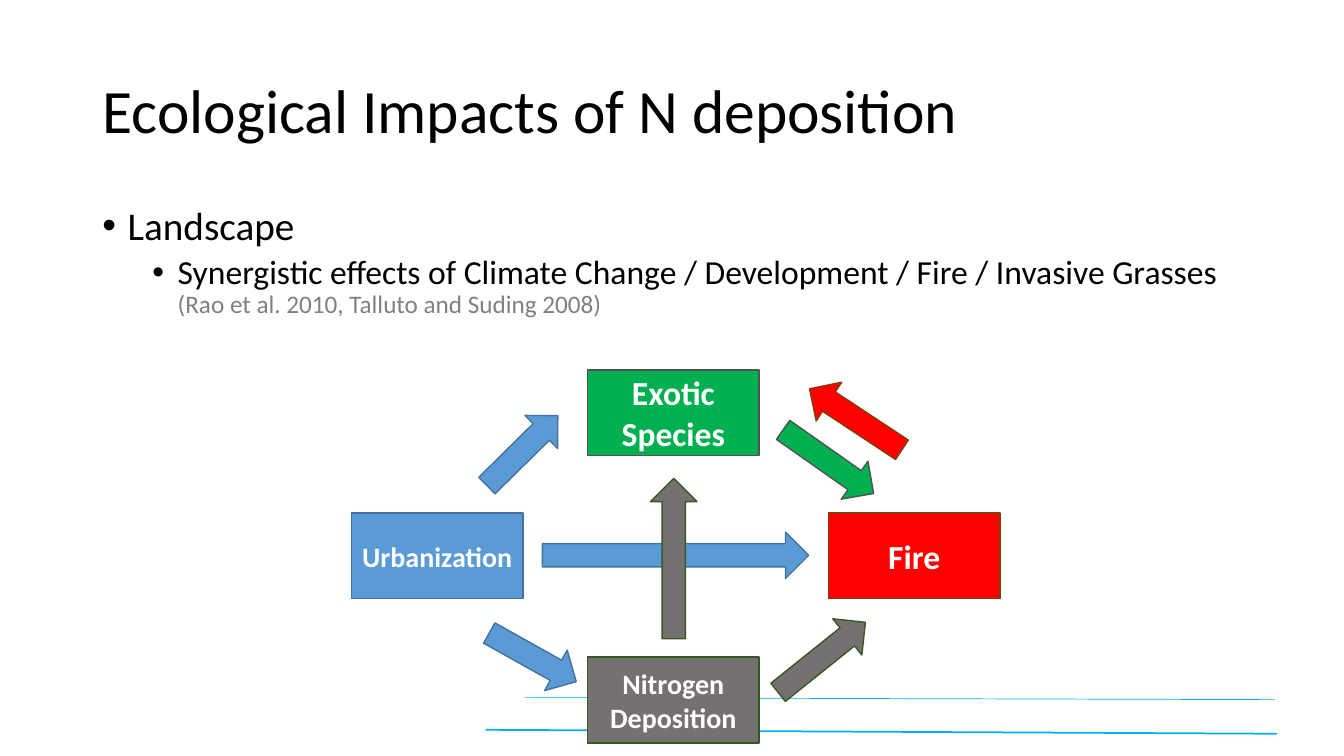
from lxml import etree
from pptx import Presentation
from pptx import util as u
from pptx.dml.color import RGBColor
from pptx.enum import shapes, text
from pptx.oxml.ns import qn

COLOURS = {
    "black": "000000", "white": "FFFFFF", "citation": "808080", "rule": "00B0F0",
    "urban": "5B9BD5", "urban edge": "43739E",
    "exotic": "00B050", "exotic edge": "525252",
    "fire": "FF0000", "fire edge": "843C0B",
    "nitrogen": "767171", "nitrogen edge": "385723",
}


def add_span(para, words, size, colour, bold=False):
    span = para.add_run()
    span.text = words
    for name, value in {"name": "Calibri", "size": u.Pt(size), "bold": bold}.items():
        setattr(span.font, name, value)
    span.font.color.rgb = RGBColor.from_string(COLOURS[colour])


def add_block(kind, place, topic):
    """Add a shape filled and edged in the colours of its topic."""
    block = page.shapes.add_shape(kind, *map(u.Cm, place))
    block.shadow.inherit = False
    block.fill.solid()
    block.fill.fore_color.rgb = RGBColor.from_string(COLOURS[topic])
    block.line.color.rgb = RGBColor.from_string(COLOURS[topic + " edge"])
    block.line.width = u.Pt(1)
    return block


deck = Presentation()
deck.slide_width, deck.slide_height = u.Cm(33.87), u.Cm(19.05)
page = deck.slides.add_slide(deck.slide_layouts[6])

# Footer rules
for ends, weight in [
    ((13.23, 17.58, 32.13, 17.63), 0.5),
    ((12.24, 18.39, 32.18, 18.49), 1.25),
]:
    rule = page.shapes.add_connector(shapes.MSO_CONNECTOR.STRAIGHT, *map(u.Cm, ends))
    rule.line.color.rgb = RGBColor.from_string(COLOURS["rule"])
    rule.line.width = u.Pt(weight)
    etree.SubElement(rule._element.spPr, qn("a:effectLst"))

# Title
title = page.shapes.add_textbox(u.Cm(2.33), u.Cm(1.02), u.Cm(29.21), u.Cm(3.68)).text_frame
title.word_wrap = True
title.vertical_anchor = text.MSO_ANCHOR.MIDDLE
title.paragraphs[0].line_spacing = 0.9
add_span(title.paragraphs[0], "Ecological Impacts of N deposition", 44, "black")

# Bullets
body = page.shapes.add_textbox(u.Cm(2.33), u.Cm(5.08), u.Cm(29.21), u.Cm(11.38)).text_frame
body.word_wrap = True
bullets = [
    (0, 0.64, 0, [("Landscape", 28, "black")]),
    (1, 1.9, 5, [
        ("Synergistic effects of Climate Change / Development / Fire / Invasive Grasses ", 24, "black"),
        ("(Rao et al. 2010, Talluto and Suding 2008)", 18, "citation"),
    ]),
]
for level, indent, before, spans in bullets:
    para = body.add_paragraph() if level else body.paragraphs[0]
    props = para._p.get_or_add_pPr()
    props.set("marL", str(u.Cm(indent)))
    props.set("indent", str(u.Cm(-0.64)))
    etree.SubElement(props, qn("a:buFont"), typeface="Arial")
    etree.SubElement(props, qn("a:buChar"), char="•")
    formats = {"level": level, "line_spacing": 0.9, "space_before": u.Pt(before)}
    for name, value in formats.items():
        setattr(para, name, value)
    for words, size, colour in spans:
        add_span(para, words, size, colour)

# Factors
for left, top, label, size, topic in [
    (8.86, 12.93, "Urbanization", 20, "urban"),
    (14.81, 9.32, "Exotic Species", 24, "exotic"),
    (20.88, 12.93, "Fire", 24, "fire"),
    (14.81, 16.56, "Nitrogen Deposition", 20, "nitrogen"),
]:
    box = add_block(shapes.MSO_SHAPE.RECTANGLE, (left, top, 4.32, 2.16), topic)
    box.text_frame.word_wrap = True
    box.text_frame.vertical_anchor = text.MSO_ANCHOR.MIDDLE
    para = box.text_frame.paragraphs[0]
    para.alignment = text.PP_ALIGN.CENTER
    add_span(para, label, size, "white", bold=True)

# Influences between factors
for left, top, length, angle, topic in [
    (11.91, 10.77, 2.51, 315.4, "urban"),
    (12.17, 15.98, 2.51, 29.2, "urban"),
    (13.67, 13.41, 6.71, 0, "urban"),
    (14.96, 13.49, 4.04, 270, "nitrogen"),
    (19.3, 15.98, 2.82, 321.3, "nitrogen"),
    (19.48, 11.05, 2.79, 35.1, "exotic"),
    (20.17, 9.98, 2.79, 213.4, "fire"),
]:
    arrow = add_block(shapes.MSO_SHAPE.RIGHT_ARROW, (left, top, length, 1.17), topic)
    arrow.rotation = angle

deck.save("out.pptx")
